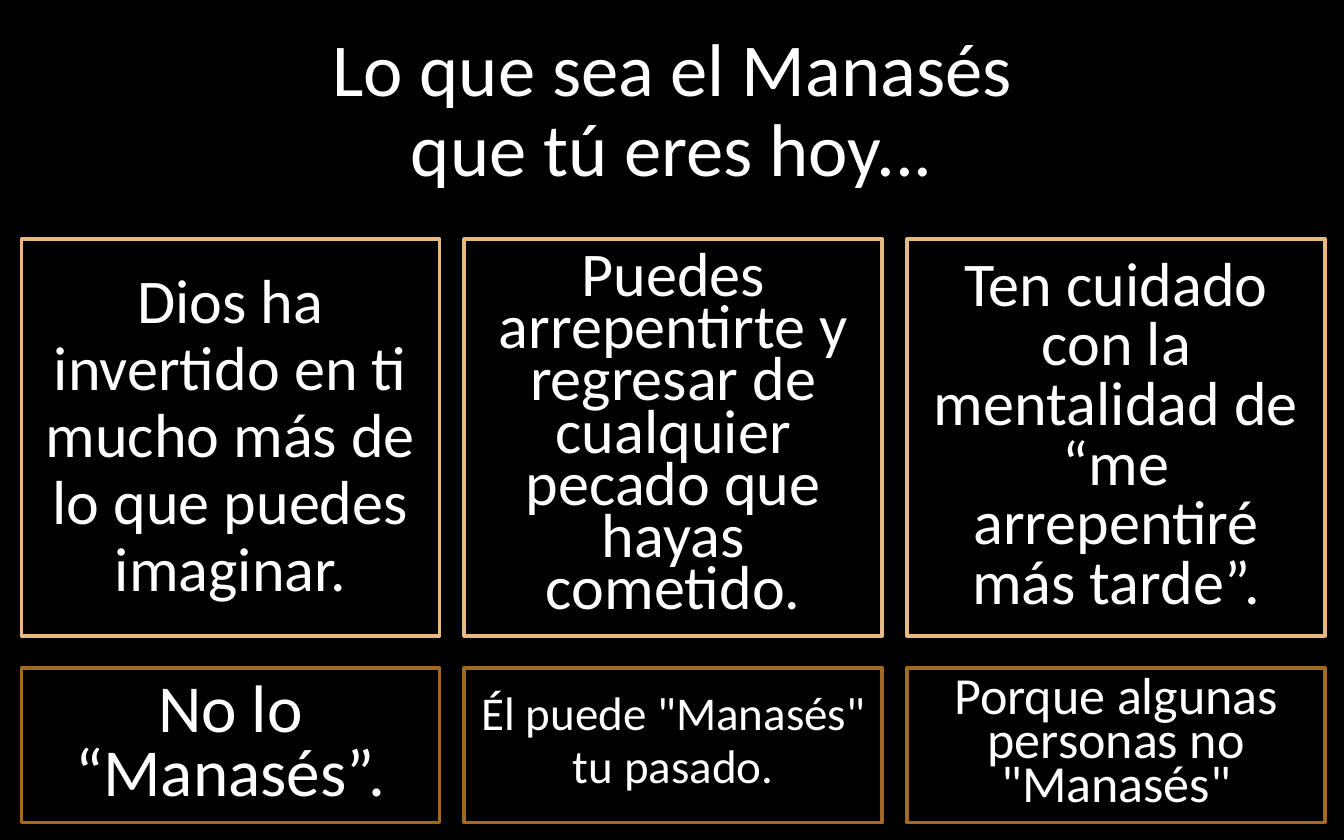
import pptx
import pptx.util
import pptx.dml.color
import pptx.enum.shapes
import pptx.enum.text
from pptx.util import Inches, Pt

TITLE = "Lo que sea el Manasés\vque tú eres hoy..."

# Each row: top, height, border colour, boxes of (paragraphs, font size, line spacing)
ROWS = [
    (1.78, 2.95, "E6BA82", [
        (["Dios ha invertido en ti mucho más de lo que puedes imaginar."], 33.3, 0.9),
        (["Puedes arrepentirte y regresar de cualquier pecado que hayas cometido."], 33.3, 0.7),
        (["Ten cuidado con la mentalidad de “me arrepentiré más tarde”."], 33.3, 0.8),
    ]),
    (4.97, 1.15, "A26921", [
        (["No lo “Manasés”."], 36, 0.8),
        (['Él puede "Manasés"', "tu pasado."], 25.2, 0.7),
        (['Porque algunas personas no "Manasés"'], 27.9, 0.7),
    ]),
]
LEFT, COLUMN_STEP, BOX_WIDTH = 0.16, 3.295, 3.11


def color(value):
    return pptx.dml.color.RGBColor.from_string(value)


def write_text(shape, texts, size, line_spacing, space_before):
    frame = shape.text_frame
    frame.word_wrap = True
    frame.auto_size = pptx.enum.text.MSO_AUTO_SIZE.NONE
    frame.vertical_anchor = pptx.enum.text.MSO_ANCHOR.MIDDLE
    frame.text = "\n".join(texts)
    for paragraph in frame.paragraphs:
        paragraph.alignment = pptx.enum.text.PP_ALIGN.CENTER
        paragraph.line_spacing = line_spacing
        paragraph.space_before = Pt(space_before)
        paragraph.font.name = "Calibri"
        paragraph.font.size = Pt(size)
        paragraph.font.color.rgb = color("FFFFFF")


def add_box(slide, left, top, height, border):
    box = slide.shapes.add_shape(
        pptx.enum.shapes.MSO_SHAPE.RECTANGLE,
        Inches(left), Inches(top), Inches(BOX_WIDTH), Inches(height))
    box.shadow.inherit = False
    box.fill.background()
    box.line.color.rgb = color(border)
    box.line.width = Pt(2)
    return box


def main():
    presentation = pptx.Presentation()
    presentation.slide_width = Inches(10)
    presentation.slide_height = Inches(6.25)
    slide = presentation.slides.add_slide(presentation.slide_layouts.get_by_name("Title Only"))
    slide.background.fill.solid()
    slide.background.fill.fore_color.rgb = color("000000")

    title = slide.shapes.title
    title.left, title.top = Inches(0.69), Inches(0.13)
    title.width, title.height = Inches(8.62), Inches(1.41)
    write_text(title, [TITLE], 40, 0.9, 0)

    for top, height, border, boxes in ROWS:
        for column, (texts, size, line_spacing) in enumerate(boxes):
            box = add_box(slide, LEFT + column * COLUMN_STEP, top, height, border)
            write_text(box, texts, size, line_spacing, 7.5)

    presentation.save("out.pptx")


if __name__ == "__main__":
    main()
